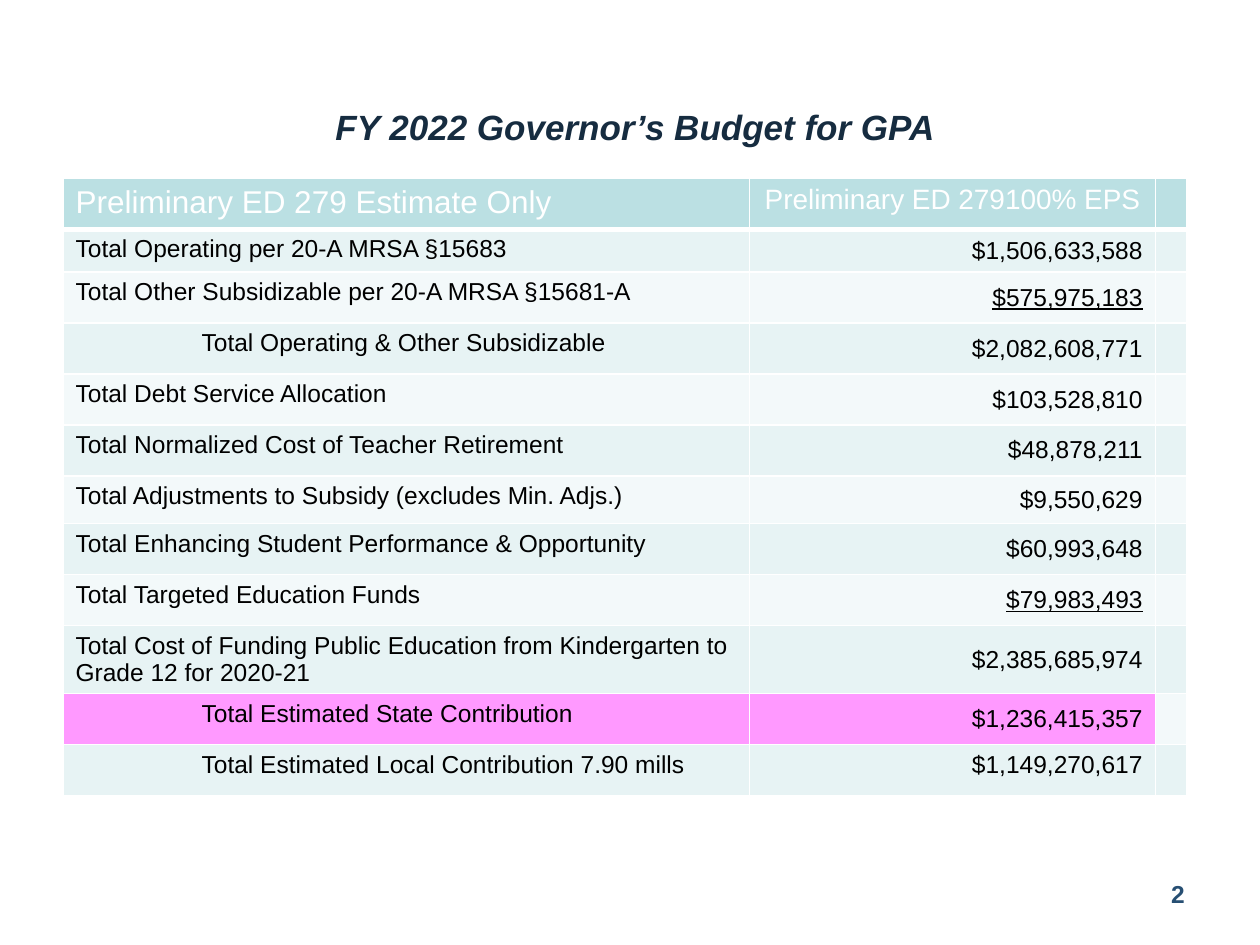
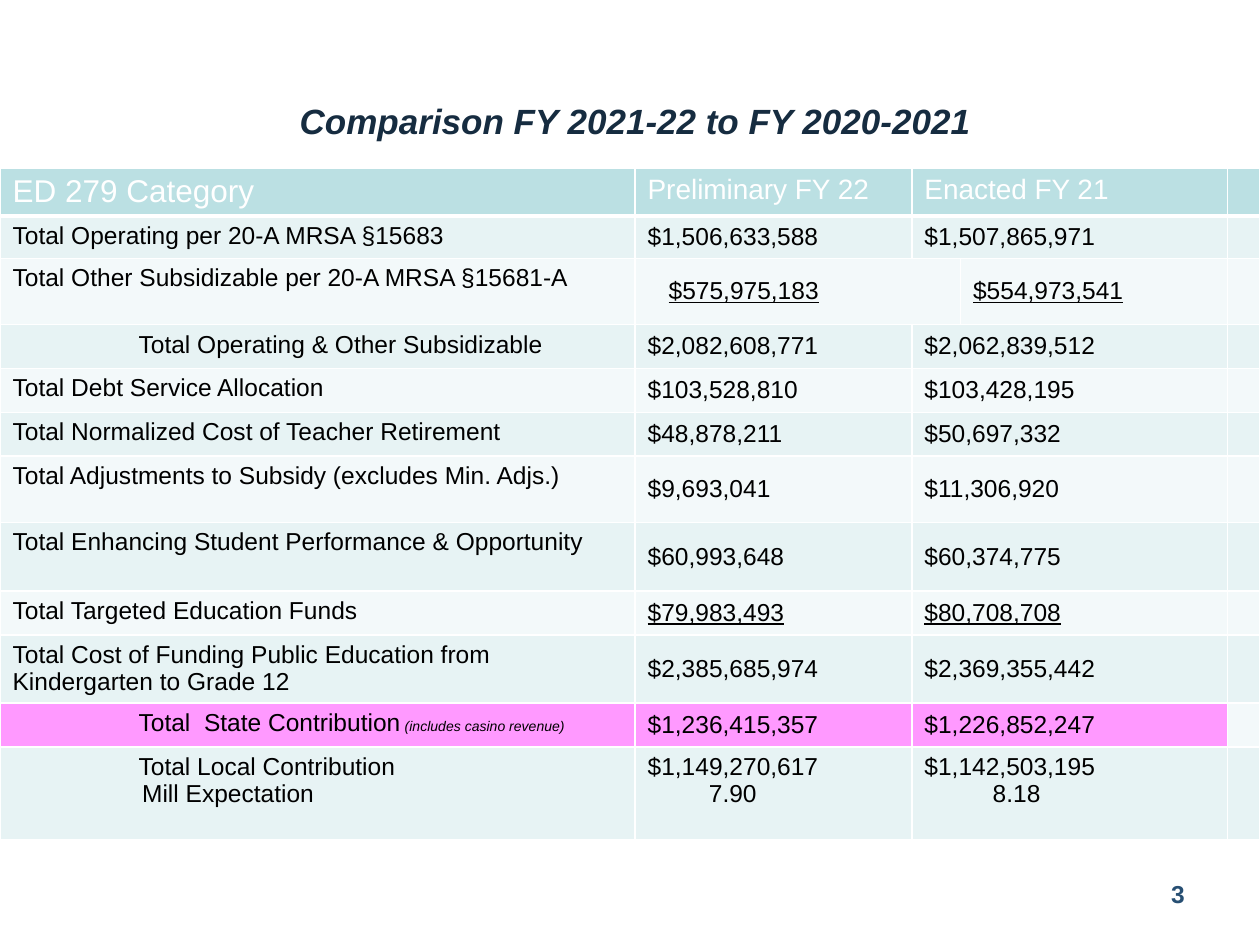
"""Build two slides of school funding tables."""
from dataclasses import dataclass

from lxml.etree import SubElement
from pptx import Presentation
from pptx.dml.color import RGBColor
from pptx.enum.text import MSO_ANCHOR as Anchor, PP_ALIGN as Align
from pptx.oxml.ns import qn
from pptx.util import Pt

FONT = "Arial"
TITLE_COLOR = RGBColor(0x16, 0x2C, 0x40)
NUMBER_COLOR = RGBColor(0x27, 0x4F, 0x73)
WHITE = RGBColor(0xFF, 0xFF, 0xFF)
BLACK = RGBColor(0x00, 0x00, 0x00)
HEADER_FILL = RGBColor(0xBB, 0xE0, 0xE3)
BAND_FILLS = (RGBColor(0xF3, 0xF9, 0xFA), RGBColor(0xE7, 0xF3, 0xF4))
HIGHLIGHT_FILL = RGBColor(0xFF, 0x99, 0xFF)
LABEL_SIZE, AMOUNT_HEADER_SIZE, BODY_SIZE, NOTE_SIZE = 18, 16, 14, 8


@dataclass
class Row:
    """One table row; indents hold one value per line of a cell."""
    height: float
    label: str
    amounts: tuple
    label_indents: tuple = (0,)
    amount_indents: tuple = ((0,), (0,))
    underlined: bool = False
    highlighted: bool = False
    note: str = ""
    top_anchored: bool = False
    spans: tuple = ()


BUDGET = {
    "title": "FY 2022 Governor’s Budget for GPA",
    "title_height": 60,
    "number": "2",
    "left": 36,
    "top": 102,
    "columns": (392.4, 231.8, 18),
    "spans": ((1, 1),),
    "header_align": Align.CENTER,
    "amount_align": Align.RIGHT,
    "rows": [
        Row(29.1, "Preliminary ED 279 Estimate Only", ("Preliminary ED 279100% EPS",)),
        Row(24.5, "Total Operating per 20-A MRSA §15683", ("$1,506,633,588",)),
        Row(29.1, "Total Other Subsidizable per 20-A MRSA §15681-A", ("$575,975,183",),
            underlined=True),
        Row(29.1, "Total Operating & Other Subsidizable", ("$2,082,608,771",), (72,)),
        Row(29.1, "Total Debt Service Allocation", ("$103,528,810",)),
        Row(29.1, "Total Normalized Cost of Teacher Retirement", ("$48,878,211",)),
        Row(27.4, "Total Adjustments to Subsidy (excludes Min. Adjs.)", ("$9,550,629",)),
        Row(29.1, "Total Enhancing Student Performance & Opportunity", ("$60,993,648",)),
        Row(29.1, "Total Targeted Education Funds", ("$79,983,493",), underlined=True),
        Row(38.9, "Total Cost of Funding Public Education from Kindergarten to "
            "Grade 12 for 2020-21", ("$2,385,685,974",)),
        Row(29.1, "Total Estimated State Contribution", ("$1,236,415,357",), (72,),
            highlighted=True),
        Row(29.1, "Total Estimated Local Contribution 7.90 mills", ("$1,149,270,617",),
            (72,), top_anchored=True),
    ],
}

COMPARISON = {
    "title": "Comparison FY 2021-22 to FY 2020-2021",
    "title_height": 54,
    "number": "3",
    "left": 0,
    "top": 96,
    "columns": (362.9, 158.2, 27.8, 152.5, 18.6),
    "spans": ((1, 1), (2, 3)),
    "header_align": Align.LEFT,
    "amount_align": Align.LEFT,
    "rows": [
        Row(27.4, "ED 279 Category", ("Preliminary FY 22", "Enacted FY 21")),
        Row(22.9, "Total Operating per 20-A MRSA §15683",
            ("$1,506,633,588", "$1,507,865,971")),
        Row(37.8, "Total Other Subsidizable per 20-A MRSA §15681-A",
            ("$575,975,183", "$554,973,541"), amount_indents=((12,), (0,)),
            underlined=True, spans=((1, 2), (3, 3))),
        Row(25.1, "Total Operating & Other Subsidizable",
            ("$2,082,608,771", "$2,062,839,512"), (72,)),
        Row(25.1, "Total Debt Service Allocation", ("$103,528,810", "$103,428,195")),
        Row(25.1, "Total Normalized Cost of Teacher Retirement",
            ("$48,878,211", "$50,697,332")),
        Row(37.8, "Total Adjustments to Subsidy (excludes Min. Adjs.)",
            ("$9,693,041", "$11,306,920")),
        Row(39.2, "Total Enhancing Student Performance & Opportunity",
            ("$60,993,648", "$60,374,775")),
        Row(25.1, "Total Targeted Education Funds", ("$79,983,493", "$80,708,708"),
            underlined=True),
        Row(38.9, "Total Cost of Funding Public Education from Kindergarten to Grade 12",
            ("$2,385,685,974", "$2,369,355,442")),
        Row(25.1, "Total  State Contribution", ("$1,236,415,357", "$1,226,852,247"),
            (72,), highlighted=True, note=" (includes casino revenue)"),
        Row(53.3, "Total Local Contribution\nMill Expectation",
            ("$1,149,270,617\n7.90", "$1,142,503,195\n8.18"), (72, 74),
            ((0, 35), (0, 39)), top_anchored=True),
    ],
}


def style_run(run, size, color, bold=False, italic=False, underline=False):
    font = run.font
    font.name, font.size, font.color.rgb = FONT, Pt(size), color
    font.bold, font.italic, font.underline = bold, italic, underline


def draw_borders(cell, bottom_width):
    properties = cell._tc.get_or_add_tcPr()
    for side, width in (("L", 1), ("R", 1), ("T", 1), ("B", bottom_width)):
        line = SubElement(properties, qn(f"a:ln{side}"), w=str(Pt(width)))
        SubElement(SubElement(line, qn("a:solidFill")), qn("a:srgbClr"), val=str(WHITE))


def write_cell(cell, text, size, color, indents=(0,), align=Align.LEFT, underline=False):
    cell.text_frame.text = text
    for paragraph, indent in zip(cell.text_frame.paragraphs, indents):
        paragraph.alignment = align
        if indent:
            paragraph._p.get_or_add_pPr().set("marL", str(Pt(indent)))
        for run in paragraph.runs:
            style_run(run, size, color, underline=underline)


def fill_row(table, index, row, content):
    is_header = index == 0
    band = HEADER_FILL if is_header else BAND_FILLS[index % 2]
    color = WHITE if is_header else BLACK
    last = len(table.columns) - 1
    for column in range(last + 1):
        cell = table.cell(index, column)
        draw_borders(cell, 3 if is_header else 1)
        cell.fill.solid()
        highlighted = row.highlighted and column < last
        cell.fill.fore_color.rgb = HIGHLIGHT_FILL if highlighted else band
        end = cell.text_frame.paragraphs[0]._p.get_or_add_endParaRPr()
        end.set("sz", str(BODY_SIZE * 100))

    label = table.cell(index, 0)
    write_cell(label, row.label, LABEL_SIZE if is_header else BODY_SIZE, color,
               row.label_indents)
    if row.note:
        note = label.text_frame.paragraphs[0].add_run()
        note.text = row.note
        style_run(note, NOTE_SIZE, color, italic=True)

    spans = row.spans or content["spans"]
    for amount, indents, (first, final) in zip(row.amounts, row.amount_indents, spans):
        cell = table.cell(index, first)
        if final > first:
            cell.merge(table.cell(index, final))
        write_cell(cell, amount, AMOUNT_HEADER_SIZE if is_header else BODY_SIZE, color,
                   indents, content["header_align" if is_header else "amount_align"],
                   row.underlined)
        if not (is_header or row.top_anchored):
            cell.vertical_anchor = Anchor.MIDDLE


def add_title(slide, text, height):
    title = slide.shapes.title
    title.left, title.top, title.width, title.height = Pt(42), Pt(42), Pt(642), Pt(height)
    title.text_frame.text = text
    title.text_frame.vertical_anchor = Anchor.MIDDLE
    paragraph = title.text_frame.paragraphs[0]
    paragraph.alignment = Align.CENTER
    style_run(paragraph.runs[0], 20, TITLE_COLOR, bold=True, italic=True)


def add_page_number(slide, number):
    frame = slide.shapes.add_textbox(Pt(600), Pt(492), Pt(84), Pt(37.5)).text_frame
    frame.word_wrap = True
    frame.vertical_anchor = Anchor.MIDDLE
    frame.text = number
    frame.paragraphs[0].alignment = Align.RIGHT
    style_run(frame.paragraphs[0].runs[0], 14, NUMBER_COLOR, bold=True)


def add_table_slide(presentation, content):
    slide = presentation.slides.add_slide(presentation.slide_layouts[5])
    add_title(slide, content["title"], content["title_height"])
    rows, widths = content["rows"], content["columns"]
    table = slide.shapes.add_table(
        len(rows), len(widths), Pt(content["left"]), Pt(content["top"]),
        Pt(sum(widths)), Pt(sum(row.height for row in rows))).table
    for column, width in zip(table.columns, widths):
        column.width = Pt(width)
    for index, row in enumerate(rows):
        table.rows[index].height = Pt(row.height)
        fill_row(table, index, row, content)
    add_page_number(slide, content["number"])


def main():
    presentation = Presentation()
    presentation.slide_width, presentation.slide_height = Pt(720), Pt(540)
    for content in (BUDGET, COMPARISON):
        add_table_slide(presentation, content)
    presentation.save("out.pptx")


if __name__ == "__main__":
    main()
